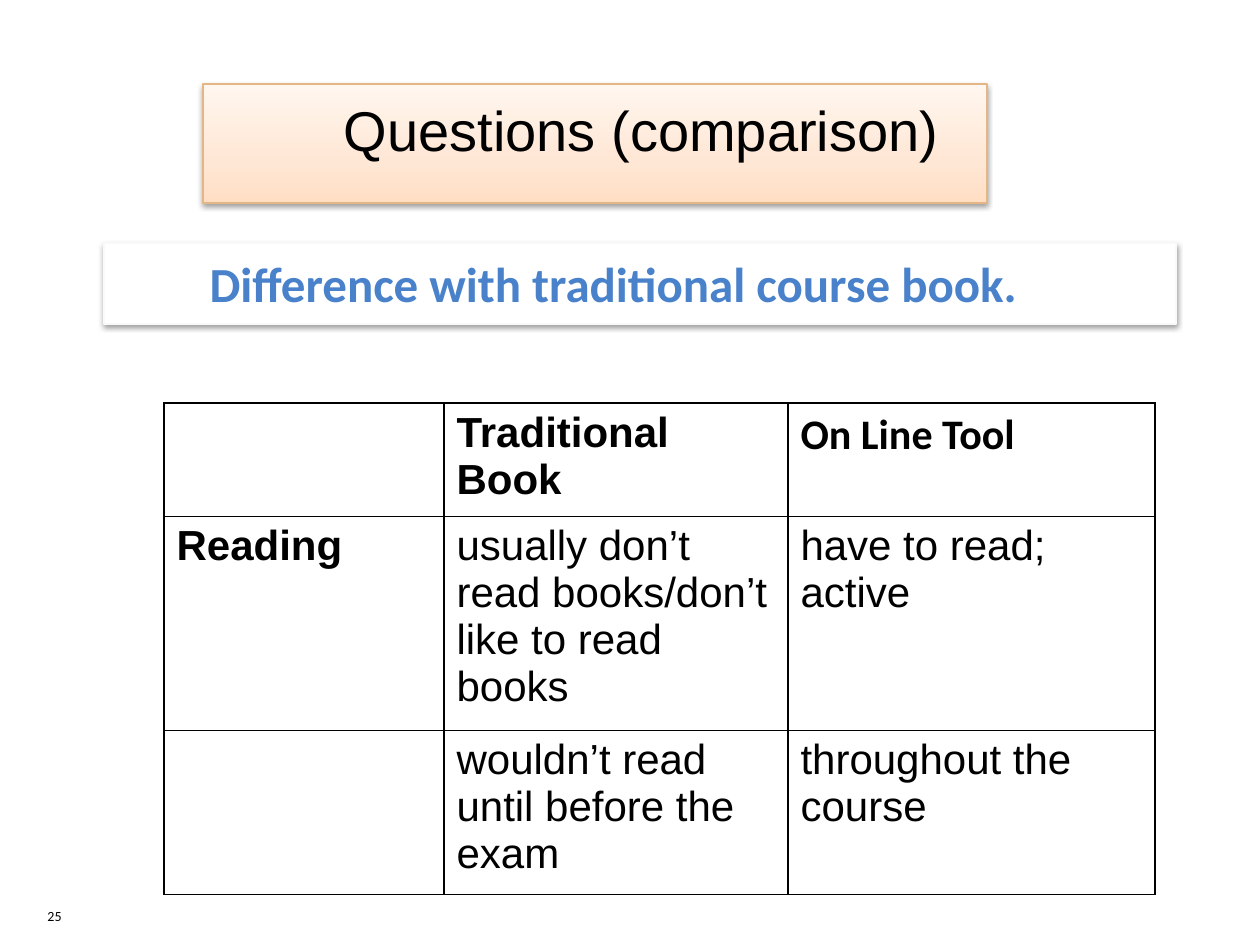
from copy import deepcopy

from pptx import Presentation
from pptx.dml.color import RGBColor
from pptx.enum.text import MSO_ANCHOR as Anchor, MSO_AUTO_SIZE as AutoSize, PP_ALIGN as Align
from pptx.oxml import parse_xml
from pptx.oxml.ns import nsdecls, qn
from pptx.util import Pt

PX = 914400 / 126
BLACK = RGBColor(0x00, 0x00, 0x00)
WHITE = RGBColor(0xFF, 0xFF, 0xFF)
PALE_GRAY = RGBColor(0xF9, 0xF9, 0xF9)
BLUE = RGBColor(0x49, 0x82, 0xCA)
TAN = RGBColor(0xE4, 0xB5, 0x85)
PEACH_STOPS = [
    (0, RGBColor(0xFF, 0xDE, 0xC4)),
    (0.35, RGBColor(0xFF, 0xE7, 0xD5)),
    (1, RGBColor(0xFF, 0xF6, 0xEF)),
]
COLUMN_WIDTHS = [280, 344, 367]
ROW_HEIGHTS = [107, 200, 152]
COMPARISON = [
    ["", "Traditional Book", "On Line Tool"],
    ["Reading", "usually don’t read books/don’t like to read books", "have to read; active"],
    ["", "wouldn’t read until before the exam", "throughout the course"],
]


def px(length):
    return round(length * PX)


def place(shape, box):
    shape.left, shape.top, shape.width, shape.height = map(px, box)


def write(frame, text, size, font="Arial", color=BLACK, bold=False,
          align=Align.LEFT, hanging=False):
    para = frame.paragraphs[0]
    para.alignment = align
    para.space_before = Pt(0)
    if hanging:
        properties = para._p.get_or_add_pPr()
        properties.set("marL", str(px(141)))
        properties.set("indent", str(px(-48)))
        properties.append(parse_xml(f"<a:buNone {nsdecls('a')}/>"))
    span = para.add_run()
    span.text = text
    span.font.name = font
    span.font.size = Pt(size)
    span.font.bold = bold
    span.font.color.rgb = color


def style_banner(shape, box, line_color, top_margin):
    place(shape, box)
    shape.line.color.rgb = line_color
    shape.line.width = Pt(0.75)
    shape._element.spPr.append(parse_xml(
        f'<a:effectLst {nsdecls("a")}>'
        f'<a:outerShdw blurRad="{Pt(3.1)}" dist="{Pt(1.6)}" dir="5400000" rotWithShape="0">'
        '<a:srgbClr val="000000"><a:alpha val="38000"/></a:srgbClr>'
        '</a:outerShdw></a:effectLst>'))
    frame = shape.text_frame
    frame.word_wrap = True
    frame.auto_size = AutoSize.NONE
    frame.vertical_anchor = Anchor.TOP
    frame.margin_top = px(top_margin)


def add_title(page, box):
    title = page.shapes.title
    title.fill.gradient()
    title.fill.gradient_angle = 90
    stop_list = title._element.spPr.find(qn("a:gradFill")).find(qn("a:gsLst"))
    stop_list.insert(1, deepcopy(stop_list[0]))
    for stop, (position, color) in zip(title.fill.gradient_stops, PEACH_STOPS):
        stop.position = position
        stop.color.rgb = color
    style_banner(title, box, TAN, 12)
    write(title.text_frame, "Questions (comparison)", 32, align=Align.CENTER, hanging=True)


def add_subtitle(page, box):
    body = page.placeholders[1]
    body.fill.solid()
    body.fill.fore_color.rgb = WHITE
    style_banner(body, box, PALE_GRAY, 10)
    write(body.text_frame, "Difference with traditional course book.", 28,
          font="Calibri", color=BLUE, bold=True, hanging=True)


def add_borders(cell):
    properties = cell._tc.get_or_add_tcPr()
    for side in ("lnL", "lnR", "lnT", "lnB"):
        properties.append(parse_xml(
            f'<a:{side} {nsdecls("a")} w="{Pt(1)}"><a:solidFill>'
            f'<a:srgbClr val="{BLACK}"/></a:solidFill></a:{side}>'))


def add_comparison(page, box):
    table = page.shapes.add_table(len(ROW_HEIGHTS), len(COLUMN_WIDTHS), *map(px, box)).table
    table.first_row = False
    table.horz_banding = False
    for column, width in zip(table.columns, COLUMN_WIDTHS):
        column.width = px(width)
    for row, height in zip(table.rows, ROW_HEIGHTS):
        row.height = px(height)
    for row_index, texts in enumerate(COMPARISON):
        for column_index, text in enumerate(texts):
            cell = table.cell(row_index, column_index)
            add_borders(cell)
            cell.fill.background()
            if text:
                font = "Calibri" if (row_index, column_index) == (0, 2) else "Arial"
                write(cell.text_frame, text, 24, font=font,
                      bold=row_index == 0 or column_index == 0)


def add_page_number(page, box):
    frame = page.shapes.add_textbox(*map(px, box)).text_frame
    frame.word_wrap = True
    frame.vertical_anchor = Anchor.BOTTOM
    write(frame, "25", 8, font="Calibri")


def main():
    deck = Presentation()
    deck.slide_width, deck.slide_height = px(1260), px(945)
    page = deck.slides.add_slide(deck.slide_layouts[1])
    add_page_number(page, (35, 900, 43, 30))
    add_title(page, (203, 84, 784, 119))
    add_subtitle(page, (104, 243, 1072, 81))
    add_comparison(page, (164, 403, sum(COLUMN_WIDTHS), sum(ROW_HEIGHTS)))
    deck.save("out.pptx")


if __name__ == "__main__":
    main()
